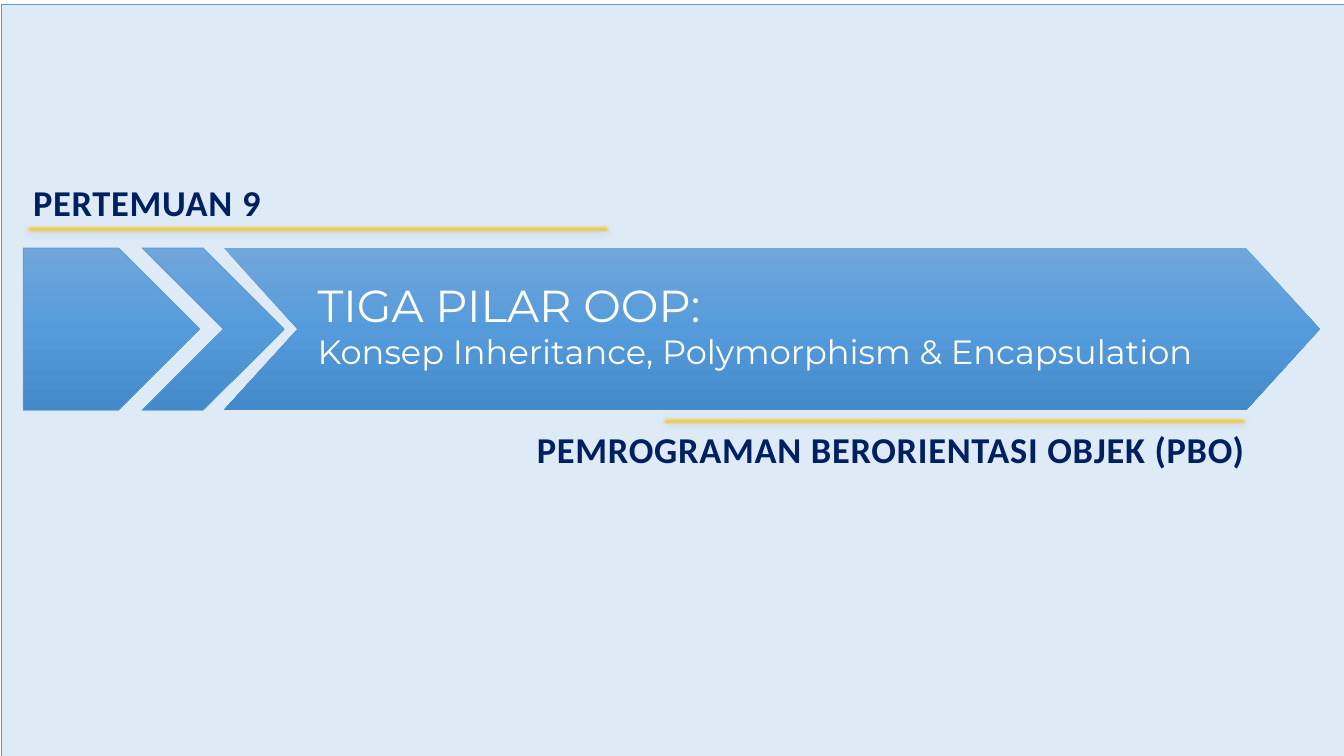
"""Build the opening slide of the lecture on the three pillars of OOP."""
from copy import deepcopy

from lxml import etree
from pptx import Presentation
from pptx.dml.color import RGBColor
from pptx.enum import shapes, text
from pptx.oxml import ns
from pptx.util import Inches, Pt

NAVY = RGBColor(0x00, 0x20, 0x60)
WHITE = RGBColor(0xFF, 0xFF, 0xFF)
PALE_BLUE = RGBColor(0xDE, 0xEB, 0xF7)
LINE_BLUE = RGBColor(0x5B, 0x9B, 0xD5)
BLUES = [RGBColor(0x71, 0xA6, 0xDB), RGBColor(0x55, 0x9B, 0xDB), RGBColor(0x44, 0x8A, 0xCA)]
GOLDS = [RGBColor(0xFF, 0xC6, 0x4B), RGBColor(0xFF, 0xC0, 0x00), RGBColor(0xE3, 0xAB, 0x00)]

SHAPE = shapes.MSO_SHAPE
LEFT, RIGHT = text.PP_ALIGN.LEFT, text.PP_ALIGN.RIGHT
BACKDROP = (0.01, 0.04, 13.33, 7.5)
ARROW_TOP, ARROW_HEIGHT = 2.46, 1.61
ARROWS = [
    (SHAPE.PENTAGON, 0.23, 1.75, 0.5, True),
    (SHAPE.CHEVRON, 1.41, 1.41, 0.572, True),
    (SHAPE.CHEVRON, 2.22, 10.87, 0.455, False),
]
BAR_WIDTH, BAR_HEIGHT = 5.81, 0.09
BARS = [(0.25, 2.23), (6.56, 4.13)]
LABEL_FORMAT = {"name": "Calibri", "size": Pt(26), "bold": True}
LABELS = [
    ("PERTEMUAN 9", (0.23, 1.82, 4.67, 0.36), LEFT),
    ("PEMROGRAMAN BERORIENTASI OBJEK (PBO)", (1.99, 4.27, 10.46, 0.36), RIGHT),
]
TITLE_BOX = (3.05, 2.65, 9.9, 1.14)
TITLE_LINES = [("TIGA PILAR OOP:", 32), ("Konsep Inheritance, Polymorphism & Encapsulation", 24)]


def add_shape(slide, kind, box, outlined):
    shape = slide.shapes.add_shape(kind, *map(Inches, box))
    shape.shadow.inherit = False
    if outlined:
        shape.line.color.rgb = LINE_BLUE
        shape.line.width = Pt(0.5)
    else:
        shape.line.fill.background()
    return shape


def fill_gradient(shape, colors):
    shape.fill.gradient()
    shape.fill.gradient_angle = 270
    stop_list = shape.element.spPr.find(".//" + ns.qn("a:gsLst"))
    while len(stop_list) < len(colors):
        stop_list.append(deepcopy(stop_list[0]))
    for index, (stop, color) in enumerate(zip(shape.fill.gradient_stops, colors)):
        stop.color.rgb = color
        stop.position = index / (len(colors) - 1)


def soften(shape):
    effects = shape.element.spPr.find(ns.qn("a:effectLst"))
    shadow = etree.SubElement(effects, ns.qn("a:outerShdw"), blurRad=str(Pt(4.5)),
                              dist=str(Pt(1.5)), dir="5400000", rotWithShape="0")
    color = etree.SubElement(shadow, ns.qn("a:srgbClr"), val="000000")
    etree.SubElement(color, ns.qn("a:alpha"), val="63000")
    etree.SubElement(effects, ns.qn("a:softEdge"), rad=str(Pt(2.5)))


def write_line(paragraph, words, alignment, color, font_format):
    paragraph.alignment = alignment
    run = paragraph.add_run()
    run.text = words
    run.font.color.rgb = color
    for name, value in font_format.items():
        setattr(run.font, name, value)
    return run


def prepare_frame(shape):
    frame = shape.text_frame
    frame.word_wrap = True
    frame.auto_size = text.MSO_AUTO_SIZE.NONE
    frame.vertical_anchor = text.MSO_ANCHOR.MIDDLE
    return frame


def add_label(slide, words, box, alignment):
    frame = prepare_frame(slide.shapes.add_textbox(*map(Inches, box)))
    run = write_line(frame.paragraphs[0], words, alignment, NAVY, LABEL_FORMAT)
    run.font._element.set("spc", "50")


def place_title(slide):
    title = slide.shapes.title
    for name, value in zip(("left", "top", "width", "height"), TITLE_BOX):
        setattr(title, name, Inches(value))
    frame = prepare_frame(title)
    for index, (words, size) in enumerate(TITLE_LINES):
        paragraph = frame.add_paragraph() if index else frame.paragraphs[0]
        write_line(paragraph, words, LEFT, WHITE, {"name": "Montserrat", "size": Pt(size)})
    slide.shapes.element.append(title.element)


def main():
    presentation = Presentation()
    presentation.slide_width = Inches(13.33)
    presentation.slide_height = Inches(7.5)
    slide = presentation.slides.add_slide(presentation.slide_layouts[5])

    backdrop = add_shape(slide, SHAPE.RECTANGLE, BACKDROP, True)
    backdrop.fill.solid()
    backdrop.fill.fore_color.rgb = PALE_BLUE

    for kind, left, width, point, outlined in ARROWS:
        arrow = add_shape(slide, kind, (left, ARROW_TOP, width, ARROW_HEIGHT), outlined)
        arrow.adjustments[0] = point
        fill_gradient(arrow, BLUES)

    for left, top in BARS:
        bar = add_shape(slide, SHAPE.RECTANGLE, (left, top, BAR_WIDTH, BAR_HEIGHT), False)
        fill_gradient(bar, GOLDS)
        soften(bar)

    for label in LABELS:
        add_label(slide, *label)
    place_title(slide)
    presentation.save("out.pptx")


if __name__ == "__main__":
    main()
